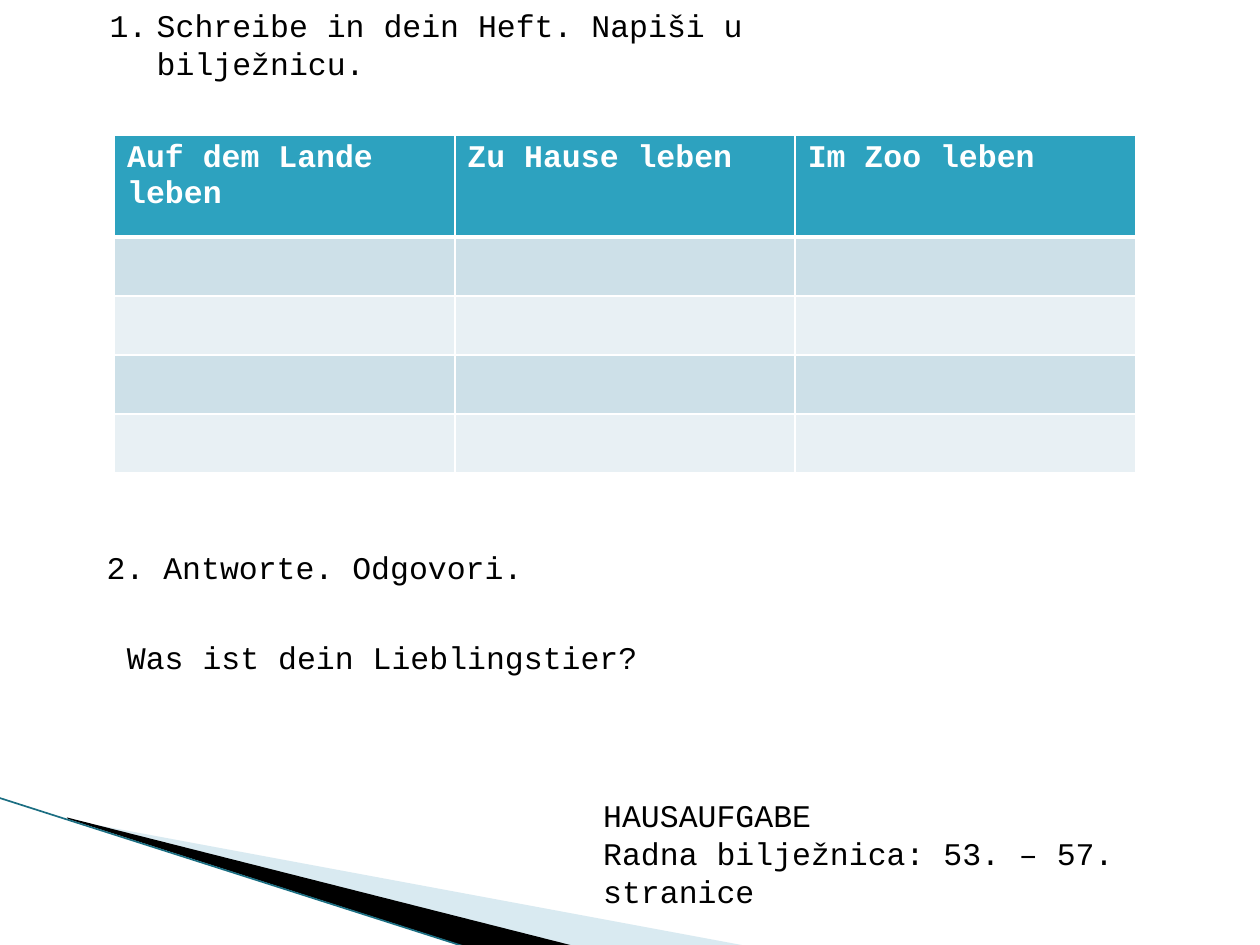
from dataclasses import dataclass

from lxml.etree import SubElement
from pptx import Presentation
from pptx.dml.color import RGBColor
from pptx.enum.shapes import MSO_CONNECTOR
from pptx.oxml.ns import qn
from pptx.util import Cm, Pt


@dataclass(frozen=True)
class Theme:
    ink: str = "000000"
    white: str = "FFFFFF"
    head: str = "2DA2BF"
    bands: tuple = ("CDE0E8", "E8F0F4")
    wedge: str = "A0CBDC"
    edge: str = "1B6E82"
    font: str = "Courier New"
    size: int = 18


theme = Theme()


def style(frame, color, bold=False):
    for para in frame.paragraphs:
        for run in para.runs:
            run.font.name = theme.font
            run.font.size = Pt(theme.size)
            run.font.bold = bold
            run.font.color.rgb = RGBColor.from_string(color)


def border(cell, bottom):
    """Draw white lines on all four sides, with the given bottom width in points."""
    props = cell._tc.get_or_add_tcPr()
    for side, width in (("L", 1), ("R", 1), ("T", 1), ("B", bottom)):
        line = SubElement(props, qn(f"a:ln{side}"), w=str(Pt(width)))
        fill = SubElement(line, qn("a:solidFill"))
        SubElement(fill, qn("a:srgbClr"), val=theme.white)


deck = Presentation()
deck.slide_width, deck.slide_height = Cm(25.4), Cm(19.05)
slide = deck.slides.add_slide(deck.slide_layouts[6])
shapes = slide.shapes

# Corner wedges: fill, opacity in percent, outline
wedges = [
    (theme.wedge, 40, [(1.4, 16.53), (15.11, 19.08), (11.58, 19.08), (1.4, 16.51)]),
    (theme.ink, 100, [(1.35, 16.48), (11.61, 19.08), (9.45, 19.1), (1.37, 16.51)]),
]
for color, alpha, points in wedges:
    start, *rest = [(Cm(x), Cm(y)) for x, y in points]
    pen = shapes.build_freeform(*start)
    pen.add_line_segments(rest)
    wedge = pen.convert_to_shape()
    wedge.shadow.inherit = False
    wedge.line.fill.background()
    wedge.fill.solid()
    wedge.fill.fore_color.rgb = RGBColor.from_string(color)
    if alpha < 100:
        tone = wedge._element.spPr.find(qn("a:solidFill"))[0]
        SubElement(tone, qn("a:alpha"), val=str(alpha * 1000))

edge = shapes.add_connector(
    MSO_CONNECTOR.STRAIGHT, Cm(-0.03), Cm(16.08), Cm(9.42), Cm(19.1))
edge.line.color.rgb = RGBColor.from_string(theme.edge)
edge.line.width = Pt(0.95)
SubElement(edge._element.spPr, qn("a:effectLst"))

# Tasks: left, top, width, height, text, numbered
tasks = [
    (1.96, 0, 17.2, 2.57, "Schreibe in dein Heft. Napiši u bilježnicu.", True),
    (1.9, 10.92, 15.6, 1.02, "2. Antworte. Odgovori.", False),
    (2.31, 12.73, 13.21, 1.02, "Was ist dein Lieblingstier?", False),
    (11.91, 15.93, 13, 1.8,
     "HAUSAUFGABE\nRadna bilježnica: 53. – 57. stranice", False),
]
for left, top, width, height, text, numbered in tasks:
    box = shapes.add_textbox(Cm(left), Cm(top), Cm(width), Cm(height))
    frame = box.text_frame
    frame.word_wrap = True
    frame.text = text
    if numbered:
        props = frame.paragraphs[0]._p.get_or_add_pPr()
        props.set("marL", str(Cm(0.95)))
        props.set("indent", str(Cm(-0.95)))
        SubElement(props, qn("a:buFont"), typeface=theme.font)
        SubElement(props, qn("a:buAutoNum"), type="arabicPeriod")
    style(frame, theme.ink)

# Table of animals by home
heads = ["Auf dem Lande leben", "Zu Hause leben", "Im Zoo leben"]
rows = 5
table = shapes.add_table(
    rows, len(heads), Cm(2.31), Cm(2.73), Cm(20.58), Cm(6.81)).table
for col in table.columns:
    col.width = Cm(6.86)
for r, row in enumerate(table.rows):
    row.height = Cm(1.19 if r else 2.05)
    for c, cell in enumerate(row.cells):
        border(cell, 1 if r else 3)
        color = theme.bands[(r - 1) % 2] if r else theme.head
        cell.fill.solid()
        cell.fill.fore_color.rgb = RGBColor.from_string(color)
        if r == 0:
            cell.text_frame.text = heads[c]
            style(cell.text_frame, theme.white, bold=True)

deck.save("out.pptx")
